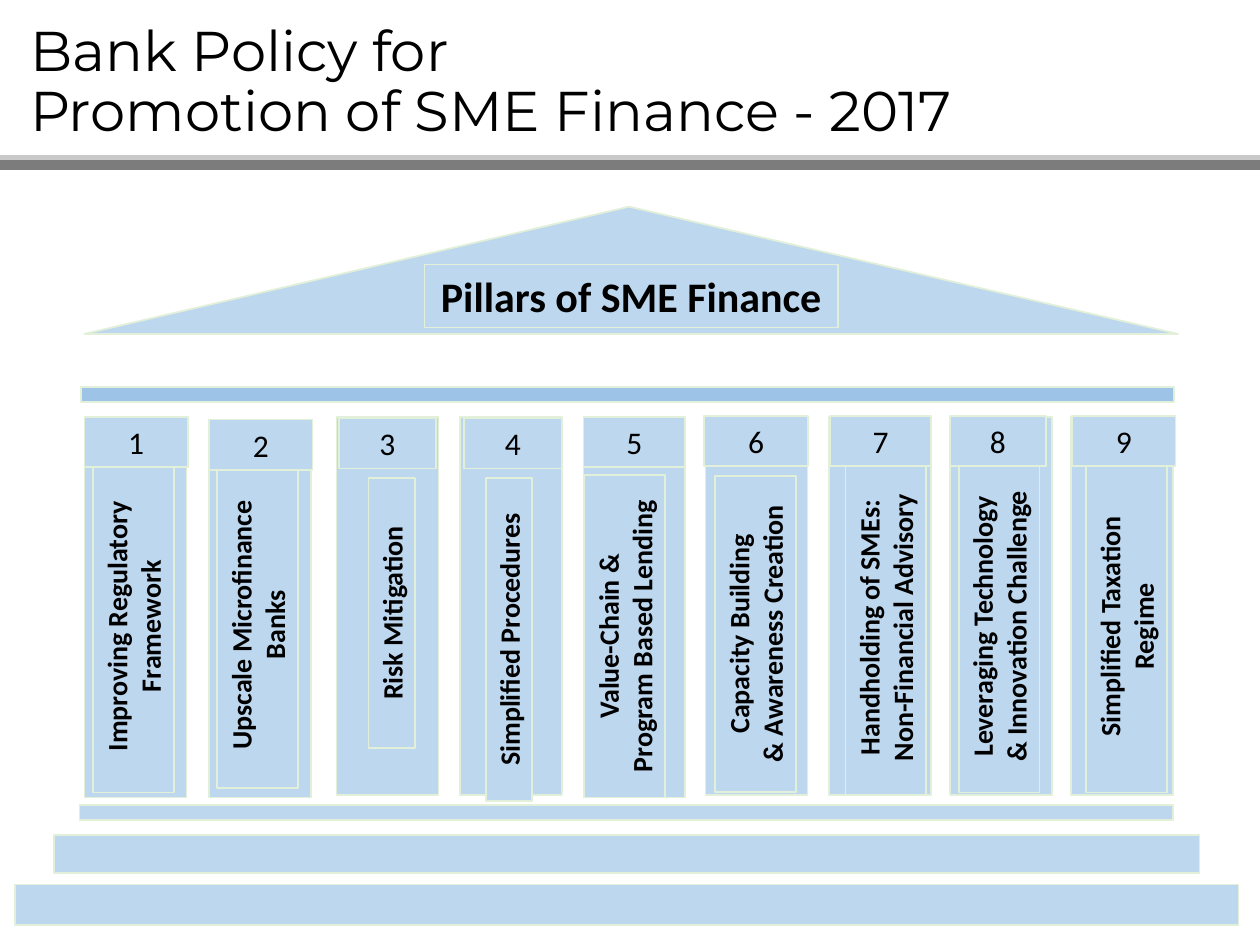
from dataclasses import dataclass

from lxml import etree
from pptx import Presentation
from pptx.dml.color import RGBColor
from pptx.enum.shapes import MSO_CONNECTOR, MSO_SHAPE
from pptx.enum.text import MSO_ANCHOR, PP_ALIGN
from pptx.oxml.ns import qn
from pptx.util import Inches, Pt

RECTANGLE = MSO_SHAPE.RECTANGLE
TRIANGLE = MSO_SHAPE.ISOSCELES_TRIANGLE
STRAIGHT = MSO_CONNECTOR.STRAIGHT
CENTER = PP_ALIGN.CENTER
TOP, MIDDLE = MSO_ANCHOR.TOP, MSO_ANCHOR.MIDDLE

COLORS = {
    "stone": "BDD7EE",
    "beam": "9DC3E6",
    "edge": "E2F0D9",
    "rule_light": "C9C9C9",
    "rule_dark": "7C7C7C",
    "text": "000000",
}
BODY_FONT, TITLE_FONT = "Calibri", "Montserrat"
COLUMN_WIDTH, COLUMN_HEIGHT = 0.81, 3
NUMBER_HEIGHT = 0.4
LABEL_THICKNESS = {1: 0.37, 2: 0.64}


@dataclass
class Box:
    left: float
    top: float
    width: float
    height: float


@dataclass
class Pillar:
    """Column corner, number plate and label; the label is placed before its turn."""
    left: float
    top: float
    number_left: float
    number_top: float
    number_width: float
    label_left: float
    label_top: float
    label_length: float
    label: str


PILLARS = [
    Pillar(0.67, 3.33, 0.67, 3.31, 0.82, -0.26, 4.65, 2.64, "Improving Regulatory\nFramework"),
    Pillar(1.66, 3.33, 1.66, 3.33, 0.82, 0.75, 4.64, 2.59, "Upscale Microfinance\nBanks"),
    Pillar(2.67, 3.31, 2.69, 3.32, 0.77, 2.04, 4.68, 2.14, "Risk Mitigation"),
    Pillar(3.65, 3.31, 3.68, 3.32, 0.78, 2.76, 4.89, 2.56, "Simplified Procedures"),
    Pillar(4.63, 3.33, 4.63, 3.31, 0.81, 3.68, 4.73, 2.56, "Value-Chain &\nProgram Based Lending"),
    Pillar(5.6, 3.31, 5.59, 3.3, 0.82, 4.74, 4.71, 2.51, "Capacity Building\n& Awareness Creation"),
    Pillar(6.58, 3.31, 6.59, 3.3, 0.8, 5.7, 4.66, 2.66, "Handholding of SMEs:\nNon-Financial Advisory"),
    Pillar(7.54, 3.31, 7.54, 3.3, 0.76, 6.61, 4.65, 2.64, "Leveraging Technology\n& Innovation Challenge"),
    Pillar(8.5, 3.31, 8.51, 3.3, 0.82, 7.62, 4.65, 2.64, "Simplified Taxation\nRegime"),
]
STEPS = [
    Box(0.63, 6.39, 8.68, 0.12),
    Box(0.43, 6.63, 9.09, 0.3),
    Box(0.12, 7.02, 9.71, 0.32),
]


def color(name: str) -> RGBColor:
    return RGBColor.from_string(COLORS[name])


def add_block(slide, box: Box, fill: str = "stone", kind=RECTANGLE):
    block = slide.shapes.add_shape(
        kind, Inches(box.left), Inches(box.top), Inches(box.width), Inches(box.height)
    )
    block.shadow.inherit = False
    block.fill.solid()
    block.fill.fore_color.rgb = color(fill)
    block.line.color.rgb = color("edge")
    block.line.width = Pt(1)
    return block


def write(frame, text: str, size: int, bold: bool = False, font: str = BODY_FONT) -> None:
    frame.word_wrap = True
    frame.text = text
    for paragraph in frame.paragraphs:
        for run in paragraph.runs:
            run.font.name = font
            run.font.size = Pt(size)
            run.font.bold = bold
            run.font.color.rgb = color("text")


def add_plate(slide, box: Box, text: str, size: int, bold: bool = False, turn: int = 0) -> None:
    """Draw a block with centred text, turned by the given degrees."""
    plate = add_block(slide, box)
    plate.rotation = turn
    frame = plate.text_frame
    write(frame, text, size, bold)
    frame.vertical_anchor = TOP
    for paragraph in frame.paragraphs:
        paragraph.alignment = CENTER


def add_rule(slide, top: float, color_name: str) -> None:
    rule = slide.shapes.add_connector(STRAIGHT, Inches(0), Inches(top), Inches(10), Inches(top))
    rule.line.color.rgb = color(color_name)
    rule.line.width = Pt(6)
    etree.SubElement(rule._element.spPr, qn("a:effectLst"))


def add_pillar(slide, number: int, pillar: Pillar) -> None:
    add_block(slide, Box(pillar.left, pillar.top, COLUMN_WIDTH, COLUMN_HEIGHT))
    thickness = LABEL_THICKNESS[len(pillar.label.split("\n"))]
    label_box = Box(pillar.label_left, pillar.label_top, pillar.label_length, thickness)
    add_plate(slide, label_box, pillar.label, 16, bold=True, turn=270)
    number_box = Box(pillar.number_left, pillar.number_top, pillar.number_width, NUMBER_HEIGHT)
    add_plate(slide, number_box, str(number), 18)


def add_title(slide) -> None:
    title = slide.shapes.add_textbox(Inches(0.14), Inches(0.24), Inches(9), Inches(0.84))
    frame = title.text_frame
    write(frame, "Bank Policy for\vPromotion of SME Finance - 2017", 32, font=TITLE_FONT)
    frame.vertical_anchor = MIDDLE
    frame.paragraphs[0].line_spacing = 0.9


def main() -> None:
    presentation = Presentation()
    presentation.slide_width = Inches(10)
    presentation.slide_height = Inches(7.5)
    slide = presentation.slides.add_slide(presentation.slide_layouts[6])

    add_rule(slide, 1.27, "rule_light")
    add_rule(slide, 1.31, "rule_dark")
    add_title(slide)

    roof = add_block(slide, Box(0.67, 1.64, 8.68, 1.01), kind=TRIANGLE)
    roof.adjustments[0] = 0.498
    add_plate(slide, Box(3.37, 2.1, 3.28, 0.5), "Pillars of SME Finance", 24, bold=True)
    add_block(slide, Box(0.64, 3.07, 8.68, 0.12), "beam")

    for number, pillar in enumerate(PILLARS, start=1):
        add_pillar(slide, number, pillar)
    for step in STEPS:
        add_block(slide, step)

    presentation.save("out.pptx")


if __name__ == "__main__":
    main()
